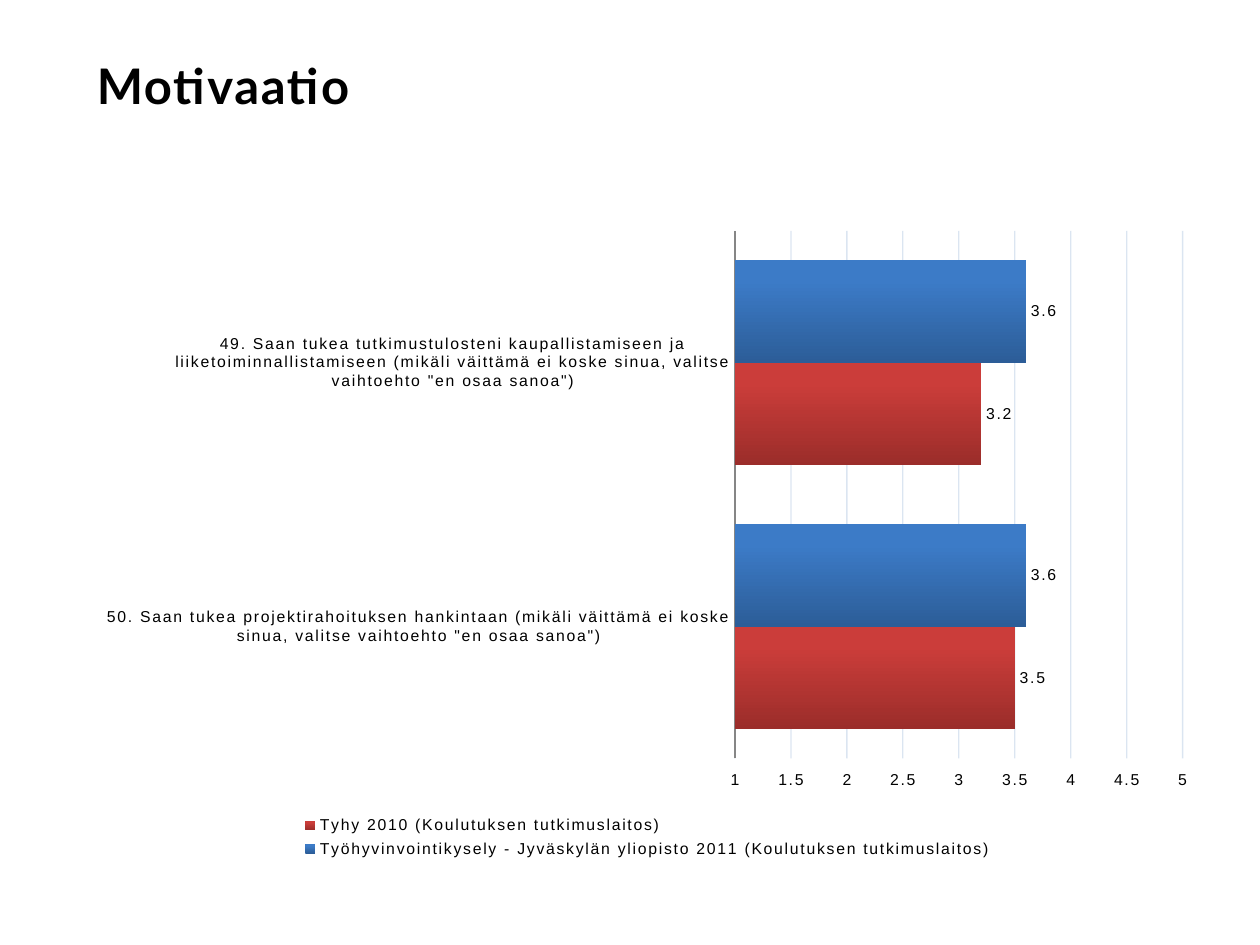
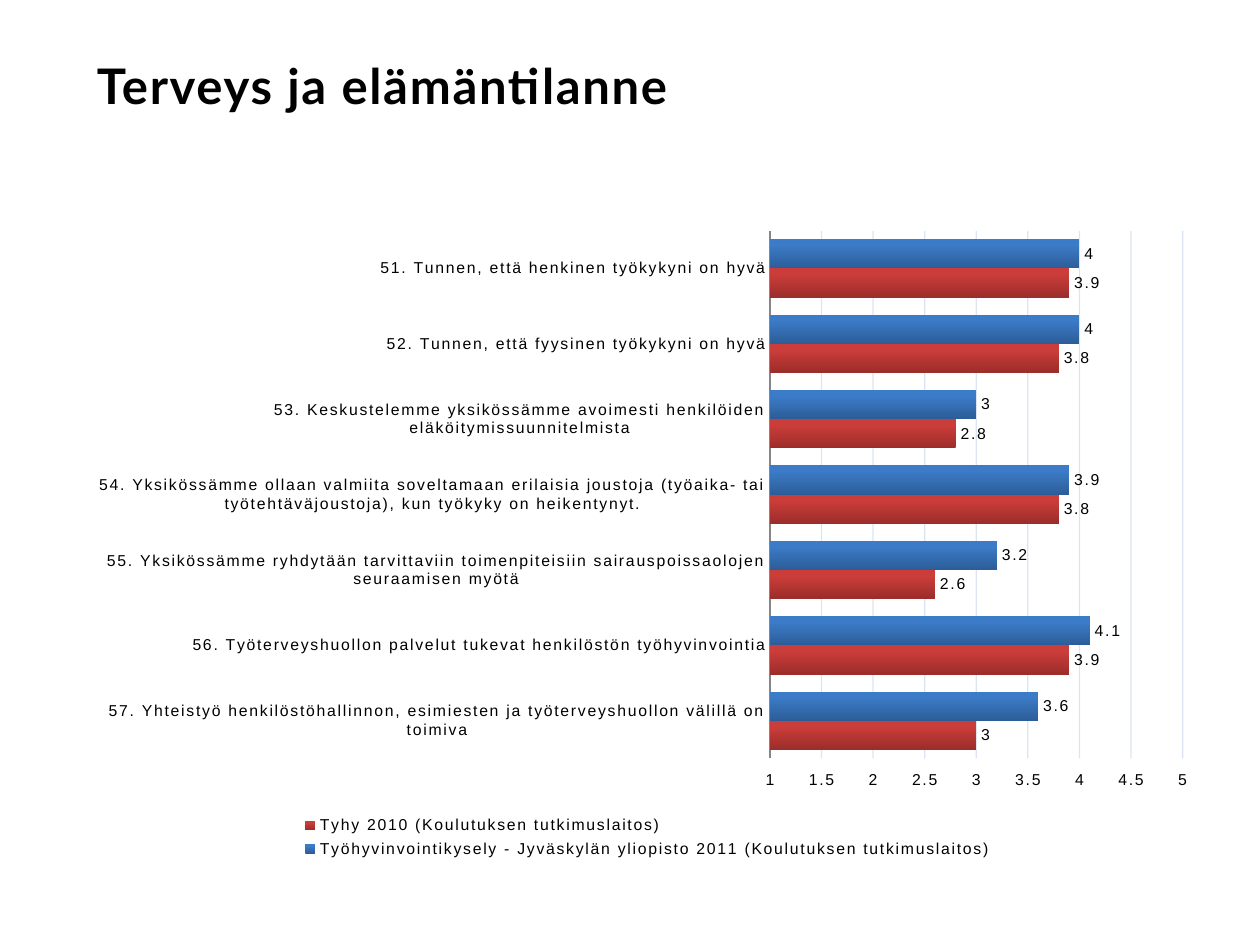
from lxml.etree import SubElement
from pptx import Presentation
from pptx.chart.data import CategoryChartData
from pptx.dml.color import RGBColor
from pptx.enum.chart import (XL_CHART_TYPE, XL_LABEL_POSITION, XL_LEGEND_POSITION,
                             XL_TICK_LABEL_POSITION, XL_TICK_MARK)
from pptx.enum.text import MSO_ANCHOR
from pptx.oxml.ns import qn
from pptx.util import Inches, Pt

COLORS = {"text": "000000", "grid": "4F81BD", "axis": "868686",
          "blue dark": "2C5D98", "blue light": "3C7BC7",
          "red dark": "9B2D2A", "red light": "CB3D3A"}
SERIES = [
    # name, bottom and top colour of the bar gradient
    ("Työhyvinvointikysely - Jyväskylän yliopisto 2011 (Koulutuksen tutkimuslaitos)",
     ("blue dark", "blue light")),
    ("Tyhy 2010 (Koulutuksen tutkimuslaitos)", ("red dark", "red light")),
]
# Each row: statement, 2011 mean, 2010 mean
SLIDES = [
    ("Motivaatio", [
        ("49. Saan tukea tutkimustulosteni kaupallistamiseen ja liiketoiminnallistamiseen "
         "(mikäli väittämä ei koske sinua, valitse vaihtoehto \"en osaa sanoa\")", 3.6, 3.2),
        ("50. Saan tukea projektirahoituksen hankintaan (mikäli väittämä ei koske sinua, "
         "valitse vaihtoehto \"en osaa sanoa\")", 3.6, 3.5),
    ]),
    ("Terveys ja elämäntilanne", [
        ("51. Tunnen, että henkinen työkykyni on hyvä", 4, 3.9),
        ("52. Tunnen, että fyysinen työkykyni on hyvä", 4, 3.8),
        ("53. Keskustelemme yksikössämme avoimesti henkilöiden eläköitymissuunnitelmista",
         3, 2.8),
        ("54. Yksikössämme ollaan valmiita soveltamaan erilaisia joustoja (työaika- tai "
         "työtehtäväjoustoja), kun työkyky on heikentynyt.", 3.9, 3.8),
        ("55. Yksikössämme ryhdytään tarvittaviin toimenpiteisiin sairauspoissaolojen "
         "seuraamisen myötä", 3.2, 2.6),
        ("56. Työterveyshuollon palvelut tukevat henkilöstön työhyvinvointia", 4.1, 3.9),
        ("57. Yhteistyö henkilöstöhallinnon, esimiesten ja työterveyshuollon välillä on toimiva",
         3.6, 3),
    ]),
]
LEFT, WIDTH = Inches(0.67), Inches(8.93)
LETTER_SPACING = "100"  # hundredths of a point


def rgb(name):
    return RGBColor.from_string(COLORS[name])


def style_font(font, name, size, bold=False):
    font.name, font.size, font.bold = name, Pt(size), bold
    font.color.rgb = rgb("text")


def add_title(page, text):
    box = page.shapes.add_textbox(LEFT, Inches(0.39), WIDTH, Inches(1.26))
    box.text_frame.word_wrap = True
    box.text_frame.vertical_anchor = MSO_ANCHOR.TOP
    span = box.text_frame.paragraphs[0].add_run()
    span.text = text
    style_font(span.font, "Lato", 28, bold=True)
    span._r.get_or_add_rPr().set("spc", LETTER_SPACING)


def style_axes(chart):
    statements, scale = chart.category_axis, chart.value_axis
    for axis in (statements, scale):
        axis.major_tick_mark = axis.minor_tick_mark = XL_TICK_MARK.NONE
        style_font(axis.tick_labels.font, "Arial", 9)
    statements.reverse_order = True
    statements.format.line.color.rgb = rgb("axis")
    statements.format.line.width = Pt(0.75)
    scale.minimum_scale, scale.maximum_scale, scale.major_unit = 1, 5, 0.5
    # The reversed category axis puts its high end at the bottom
    scale.tick_label_position = XL_TICK_LABEL_POSITION.HIGH
    scale.tick_labels.number_format = "General"
    scale.tick_labels.number_format_is_linked = False
    scale.format.line.fill.background()
    scale.has_major_gridlines = True
    grid_line = scale.major_gridlines.format.line
    grid_line.width = Pt(0.75)
    grid_line.color.rgb = rgb("grid")
    for color in chart.element.iterfind(
            f".//{qn('c:majorGridlines')}//{qn('a:srgbClr')}"):
        SubElement(color, qn("a:alpha"), val="20000")


def style_series(series, gradient):
    fill = series.format.fill
    fill.gradient()
    fill.gradient_angle = 90
    for stop, color, position in zip(fill.gradient_stops, gradient, (0, 0.8)):
        stop.color.rgb = rgb(color)
        stop.position = position
    series.invert_if_negative = False
    labels = series.data_labels
    labels.show_value = True
    labels.position = XL_LABEL_POSITION.OUTSIDE_END
    style_font(labels.font, "Arial", 9)


def add_survey_chart(page, rows):
    statements, *means = zip(*rows)
    data = CategoryChartData()
    data.categories = statements
    for (name, _), values in zip(SERIES, means):
        data.add_series(name, values)
    chart = page.shapes.add_chart(XL_CHART_TYPE.BAR_CLUSTERED, LEFT, Inches(1.73),
                                  WIDTH, Inches(5.12), data).chart
    style_font(chart.font, "Calibri", 10)
    chart.has_title = False
    chart.has_legend = True
    chart.legend.position = XL_LEGEND_POSITION.BOTTOM
    chart.legend.include_in_layout = False
    style_font(chart.legend.font, "Arial", 9)
    style_axes(chart)
    plot = chart.plots[0]
    plot.gap_width, plot.overlap, plot.vary_by_categories = 58, 0, False
    for series, (_, gradient) in zip(plot.series, SERIES):
        style_series(series, gradient)
    for properties in chart.element.iter(qn("a:defRPr")):
        properties.set("spc", LETTER_SPACING)


def main():
    deck = Presentation()
    deck.slide_width, deck.slide_height = Inches(10), Inches(7.5)
    for title, rows in SLIDES:
        page = deck.slides.add_slide(deck.slide_layouts[6])
        add_title(page, title)
        add_survey_chart(page, rows)
    deck.save("out.pptx")


if __name__ == "__main__":
    main()
